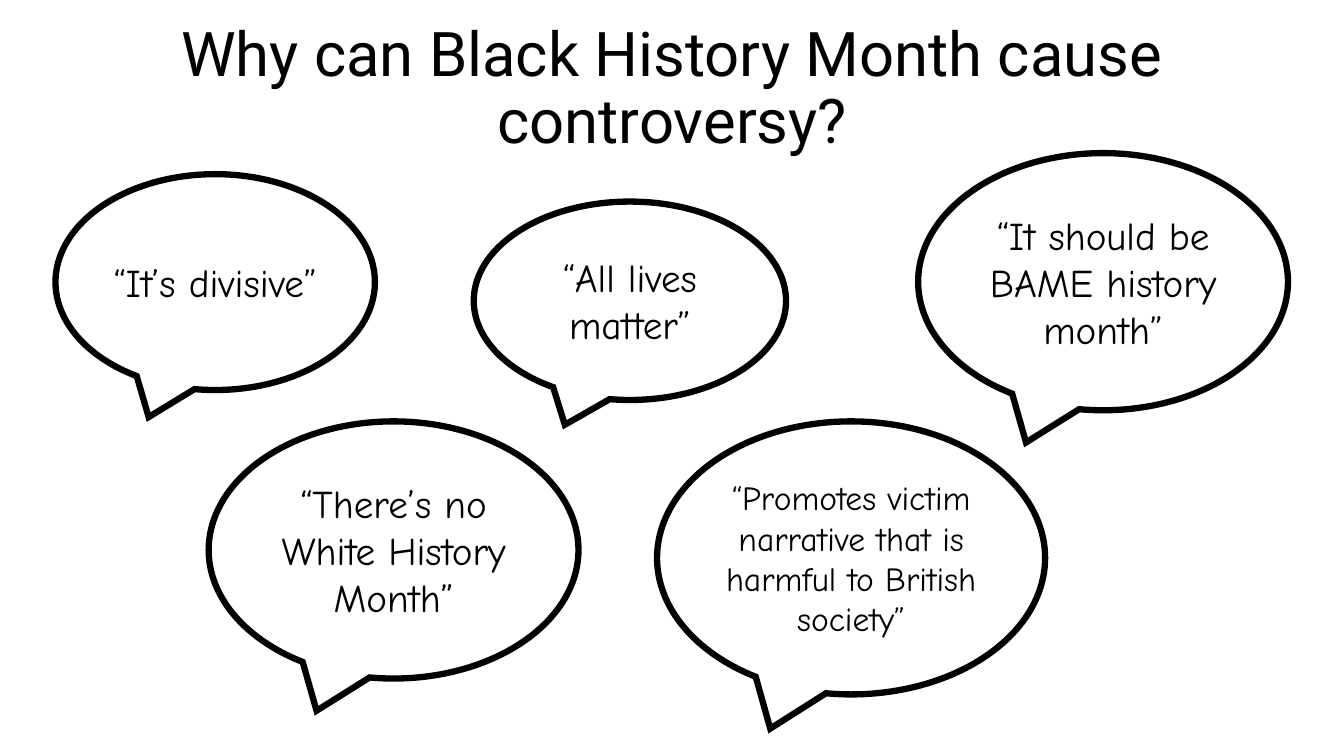
from lxml.etree import SubElement
from pptx import Presentation
from pptx.dml.color import RGBColor
from pptx.enum.shapes import MSO_SHAPE
from pptx.enum.text import MSO_ANCHOR, PP_ALIGN
from pptx.oxml.ns import qn
from pptx.util import Cm, Pt

COLORS = {"ink": "000000", "paper": "FFFFFF"}
TITLE_FONT = "Roboto"
BUBBLE_FONT = "Comic Neue"

TITLE_BOX = (2.34, 0.43, 29.21, 3.68)

# Speech bubbles: box (left, top, width, height in cm), quote, text size
BUBBLES = [
    ((1.4, 4.39, 8.05, 5.44), "“It’s divisive”", 28),
    ((5.26, 10.62, 9.32, 6.48), "“There’s no White History Month”", 28),
    ((11.94, 5.08, 7.87, 5), "“All lives matter”", 28),
    ((23.14, 3.86, 9.32, 6.48), "“It should be BAME history month”", 28),
    ((16.56, 10.62, 9.78, 6.88),
     "“Promotes victim narrative that is harmful to British society”", 24),
]


def color(name):
    return RGBColor.from_string(COLORS[name])


def write_text(sp, text, *, size, font, ink="ink", spacing=None):
    """Set centred, wrapped text in a shape."""
    tf = sp.text_frame
    tf.word_wrap = True
    tf.vertical_anchor = MSO_ANCHOR.MIDDLE
    p = tf.paragraphs[0]
    p.alignment = PP_ALIGN.CENTER
    if spacing:
        p.line_spacing = spacing
    r = p.add_run()
    r.text = text
    r.font.size = Pt(size)
    r.font.name = font
    r.font.color.rgb = color(ink)


def add_title(s, box, text):
    sp = s.shapes.add_textbox(*map(Cm, box))
    write_text(sp, text, size=44, font=TITLE_FONT, spacing=0.9)


def add_bubble(s, box, quote, size):
    sp = s.shapes.add_shape(MSO_SHAPE.OVAL_CALLOUT, *map(Cm, box))
    sp.shadow.inherit = False
    sp.fill.solid()
    sp.fill.fore_color.rgb = color("paper")
    sp.line.color.rgb = color("ink")
    sp.line.width = Pt(4.5)
    # Sharp corners on the bubble's tail
    ln = sp.element.spPr.find(qn("a:ln"))
    SubElement(ln, qn("a:miter"), lim="800000")
    write_text(sp, quote, size=size, font=BUBBLE_FONT)


def main():
    prs = Presentation()
    prs.slide_width, prs.slide_height = Cm(33.87), Cm(19.05)
    s = prs.slides.add_slide(prs.slide_layouts[6])
    add_title(s, TITLE_BOX, "Why can Black History Month cause controversy?")
    for box, quote, size in BUBBLES:
        add_bubble(s, box, quote, size)
    prs.save("out.pptx")


if __name__ == "__main__":
    main()
